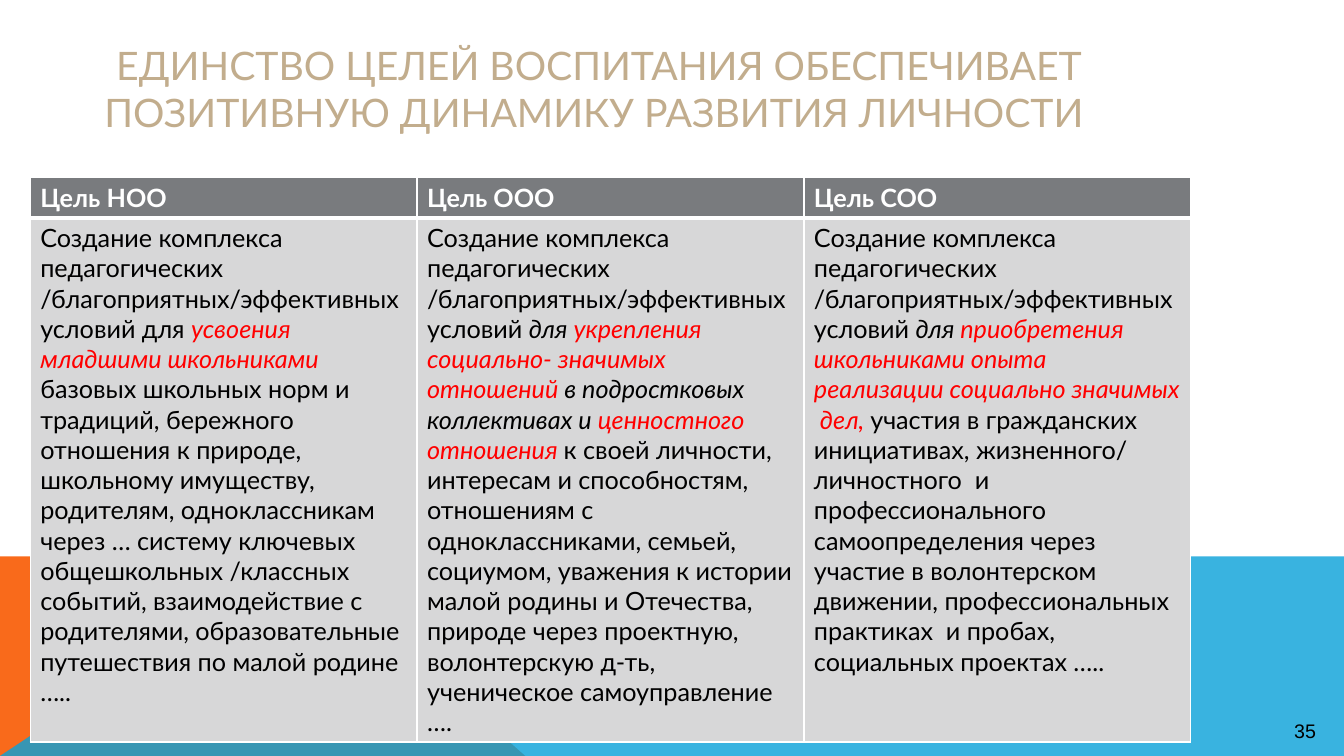
from dataclasses import dataclass

from lxml.etree import SubElement
from pptx import Presentation
from pptx.dml.color import RGBColor
from pptx.enum.text import MSO_ANCHOR, MSO_AUTO_SIZE, PP_ALIGN
from pptx.oxml.ns import qn
from pptx.util import Inches, Pt


@dataclass(frozen=True)
class Theme:
    font: str = "Lato"
    number_font: str = "Arial"
    title_size: int = 28
    body_size: int = 18
    number_size: int = 14
    title: str = "C2AD8D"
    orange: str = "F96A1B"
    blue: str = "08A1D9"
    header: str = "797B7E"
    cell: str = "D7D7D8"
    white: str = "FFFFFF"
    black: str = "000000"
    accent: str = "FF0000"


THEME = Theme()
TITLE = "ЕДИНСТВО ЦЕЛЕЙ ВОСПИТАНИЯ ОБЕСПЕЧИВАЕТ ПОЗИТИВНУЮ ДИНАМИКУ РАЗВИТИЯ ЛИЧНОСТИ "
CONDITIONS = "Создание комплекса педагогических /благоприятных/эффективных условий "

# Run styles: (colour, italic)
PLAIN = (THEME.black, False)
ITALIC = (THEME.black, True)
ACCENT = (THEME.accent, True)

GOALS = {
    "Цель НОО": [
        (CONDITIONS + "для ", PLAIN),
        ("усвоения младшими школьниками  ", ACCENT),
        ("базовых школьных норм и традиций, бережного отношения к природе, "
         "школьному имуществу, родителям, одноклассникам через … систему "
         "ключевых общешкольных /классных событий, взаимодействие с родителями, "
         "образовательные путешествия по малой родине …..", PLAIN),
    ],
    "Цель ООО": [
        (CONDITIONS, PLAIN),
        ("для ", ITALIC),
        ("укрепления социально- значимых отношений ", ACCENT),
        ("в подростковых коллективах и ", ITALIC),
        ("ценностного отношения ", ACCENT),
        ("к своей личности, интересам и способностям, отношениям с "
         "одноклассниками, семьей, социумом, уважения к истории малой родины "
         "и Отечества, природе через проектную, волонтерскую д-ть, "
         "ученическое самоуправление ….", PLAIN),
    ],
    "Цель СОО": [
        (CONDITIONS, PLAIN),
        ("для ", ITALIC),
        ("приобретения школьниками опыта реализации социально значимых  дел, ", ACCENT),
        ("участия в гражданских инициативах, жизненного/ личностного  и "
         "профессионального самоопределения через участие в волонтерском "
         "движении, профессиональных  практиках  и пробах, социальных "
         "проектах …..", PLAIN),
    ],
}


def rgb(color):
    return RGBColor.from_string(color)


def set_font(font, name, size, color):
    font.name, font.size = name, Pt(size)
    font.color.rgb = rgb(color)


def add_polygon(slide, points, color, opacity=100):
    (x, y), *rest = [(Inches(px), Inches(py)) for px, py in points]
    builder = slide.shapes.build_freeform(x, y)
    builder.add_line_segments(rest, close=True)
    sp = builder.convert_to_shape()
    sp.shadow.inherit = False
    sp.line.fill.background()
    sp.fill.solid()
    sp.fill.fore_color.rgb = rgb(color)
    if opacity < 100:
        clr = sp.fill._xPr.find(qn("a:solidFill"))[0]
        SubElement(clr, qn("a:alpha"), val=str(opacity * 1000))


def add_bottom_band(slide, left, top, width, height):
    """Orange wedge under a translucent blue band."""
    right, bottom, peak = left + width, top + height, left + 2.98
    add_polygon(slide, [(left, bottom), (left, top), (peak, top), (left + 5.21, bottom)],
                THEME.orange)
    add_polygon(slide, [(left, bottom), (peak, top), (right, top), (right, bottom)],
                THEME.blue, opacity=80)


def add_page_number(slide, number, left, top, width, height):
    box = slide.shapes.add_textbox(*map(Inches, (left, top, width, height)))
    tf = box.text_frame
    tf.word_wrap = True
    p = tf.paragraphs[0]
    p.text, p.alignment = str(number), PP_ALIGN.CENTER
    set_font(p.font, THEME.number_font, THEME.number_size, THEME.black)


def place_title(slide, text, left, top, width, height):
    sp = slide.shapes.title
    sp.left, sp.top, sp.width, sp.height = map(Inches, (left, top, width, height))
    tf = sp.text_frame
    tf.word_wrap, tf.auto_size = True, MSO_AUTO_SIZE.NONE
    tf.vertical_anchor = MSO_ANCHOR.MIDDLE
    p = tf.paragraphs[0]
    p.text, p.alignment = text, PP_ALIGN.CENTER
    set_font(p.font, THEME.font, THEME.title_size, THEME.title)


def style_cell(cell, fill, edges):
    """Fill the cell and draw white borders; edges maps L, R, T, B to points."""
    tcPr = cell._tc.get_or_add_tcPr()
    for side, width in edges.items():
        ln = SubElement(tcPr, qn(f"a:ln{side}"), w=str(Pt(width)))
        SubElement(SubElement(ln, qn("a:solidFill")), qn("a:srgbClr"), val=THEME.white)
    cell.fill.solid()
    cell.fill.fore_color.rgb = rgb(fill)


def add_goals_table(slide, goals, left, top, width, height):
    header_height = 0.38
    frame = slide.shapes.add_table(2, len(goals), *map(Inches, (left, top, width, height)))
    table = frame.table
    table.rows[0].height = Inches(header_height)
    table.rows[1].height = Inches(height - header_height)
    for col, (heading, runs) in enumerate(goals.items()):
        head, body = table.cell(0, col), table.cell(1, col)
        style_cell(head, THEME.header, {"L": 1, "R": 1, "T": 1, "B": 3})
        style_cell(body, THEME.cell, {"L": 1, "R": 1, "T": 3, "B": 1})

        p = head.text_frame.paragraphs[0]
        p.text, p.font.bold = heading, True
        set_font(p.font, THEME.font, THEME.body_size, THEME.white)

        p = body.text_frame.paragraphs[0]
        p.font.name, p.font.size = THEME.font, Pt(THEME.body_size)
        for text, (color, italic) in runs:
            r = p.add_run()
            r.text, r.font.italic = text, italic
            r.font.color.rgb = rgb(color)


def main():
    prs = Presentation()
    prs.slide_width, prs.slide_height = Inches(13.33), Inches(7.5)
    slide = prs.slides.add_slide(prs.slide_layouts[5])
    add_bottom_band(slide, 0, 5.52, 13.33, 1.98)
    add_page_number(slide, 35, 12.56, 7.08, 0.77, 0.34)
    place_title(slide, TITLE, 0.29, 0.35, 11.3, 1.05)
    add_goals_table(slide, GOALS, 0.3, 1.76, 11.51, 5.49)
    prs.save("out.pptx")


if __name__ == "__main__":
    main()
